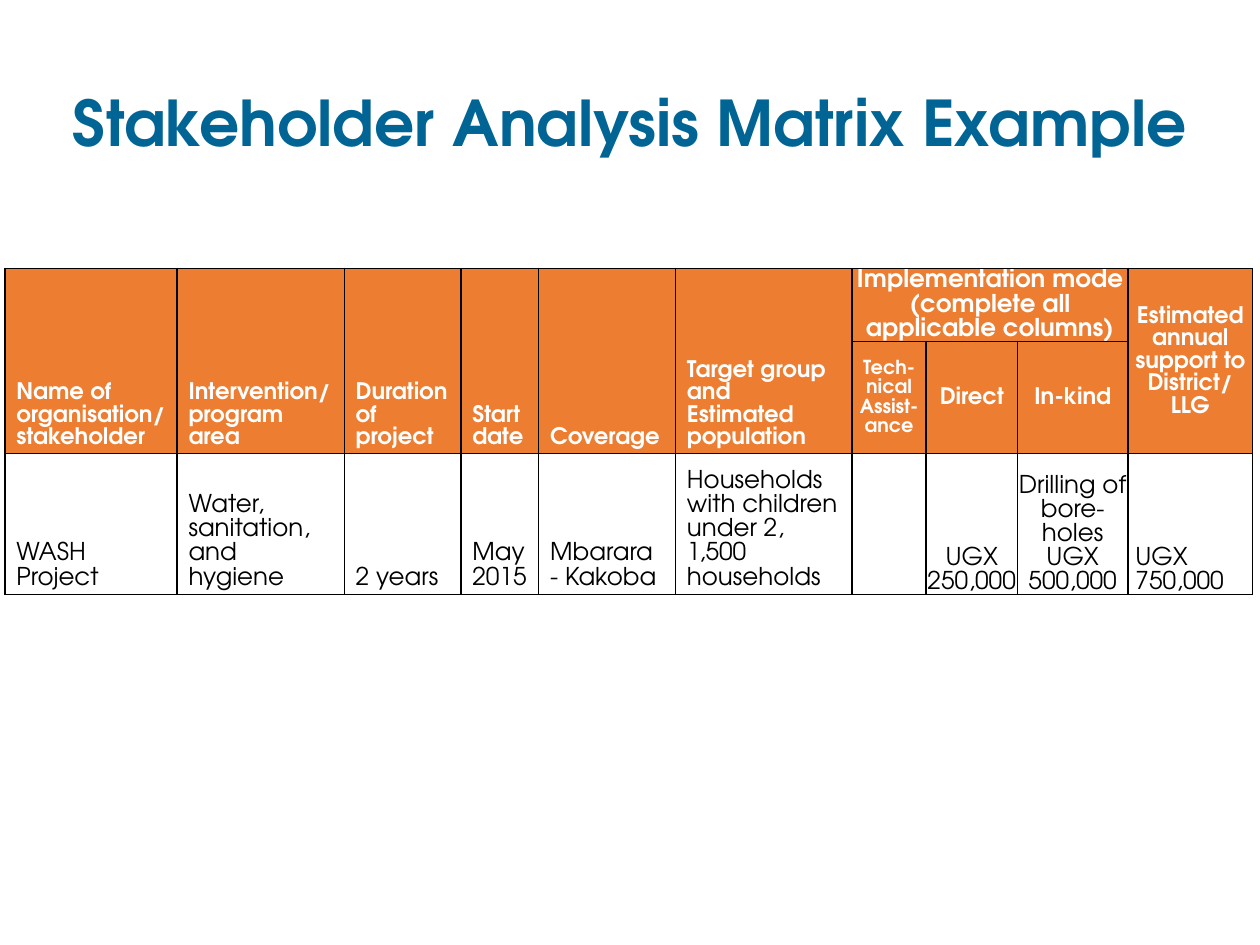
"""Build the stakeholder analysis matrix slide."""
from dataclasses import dataclass

from lxml import etree
from pptx import Presentation
from pptx import util as u
from pptx.dml.color import RGBColor
from pptx.enum import text
from pptx.oxml.ns import qn


@dataclass(frozen=True)
class Theme:
    """Colours, font and type sizes of the slide."""
    font: str = "TeX Gyre Adventor"
    title: str = "006595"
    header: str = "ED7D31"
    header_text: str = "FFFFFF"
    body_text: str = "000000"
    border: str = "000000"
    title_size: int = 36
    large: int = 14
    normal: int = 13
    small: int = 11


THEME = Theme()
COLUMN_WIDTHS = (3.47, 3.37, 2.35, 1.57, 2.76, 3.56, 1.49, 1.84, 2.23, 2.51)
ROW_HEIGHTS = (1.47, 2.26, 2.84)
WIDE_COLUMNS = 6
HEADERS = (
    "Name of organisation/ stakeholder",
    "Intervention/ program area",
    "Duration of project",
    "Start date",
    "Coverage",
    "Target group and Estimated population",
)
MODES = (
    ("Tech-nical Assist-ance", THEME.small),
    ("Direct", THEME.normal),
    ("In-kind", THEME.normal),
)
PROJECT = (
    "WASH Project",
    "Water, sanitation, and hygiene",
    "2 years",
    "May 2015",
    "Mbarara - Kakoba",
    "Households with children under 2, 1,500 households",
    "",
    "UGX 250,000",
    "Drilling of bore-holes UGX 500,000",
    "UGX 750,000",
)


def add_run(paragraph, words, size, color, bold):
    """Add one formatted run to a paragraph."""
    run = paragraph.add_run()
    run.text = words
    run.font.name = THEME.font
    run.font.size = u.Pt(size)
    run.font.bold = bold
    run.font.color.rgb = RGBColor.from_string(color)


def add_title(slide, words):
    """Place and format the title placeholder."""
    shape = slide.shapes.title
    shape.left, shape.top = u.Cm(0), u.Cm(1.37)
    shape.width, shape.height = u.Cm(25.4), u.Cm(2.34)
    frame = shape.text_frame
    frame.word_wrap = True
    frame.vertical_anchor = text.MSO_ANCHOR.MIDDLE
    paragraph = frame.paragraphs[0]
    paragraph.alignment = text.PP_ALIGN.CENTER
    paragraph.line_spacing = 0.9
    add_run(paragraph, words, THEME.title_size, THEME.title, True)


def set_borders(cell):
    """Draw a thin line on all four sides of a cell."""
    properties = cell._tc.get_or_add_tcPr()
    for side in ("lnL", "lnR", "lnT", "lnB"):
        line = etree.SubElement(properties, qn(f"a:{side}"), w=str(u.Pt(1)))
        fill = etree.SubElement(line, qn("a:solidFill"))
        etree.SubElement(fill, qn("a:srgbClr"), val=THEME.border)


def write_cell(cell, words, size, anchor, header=True, centered=False, padded=False):
    """Write formatted text into a table cell."""
    side, edge = (0.23, 0.1) if padded else (0, 0)
    cell.margin_left = cell.margin_right = u.Cm(side)
    cell.margin_top = cell.margin_bottom = u.Cm(edge)
    cell.vertical_anchor = anchor
    paragraph = cell.text_frame.paragraphs[0]
    paragraph.alignment = text.PP_ALIGN.CENTER if centered else text.PP_ALIGN.LEFT
    paragraph.line_spacing = 1.07
    paragraph.space_after = u.Pt(3)
    if words:
        color = THEME.header_text if header else THEME.body_text
        add_run(paragraph, words, size, color, header)


def add_matrix(slide):
    """Add the empty grid with its borders and fills."""
    rows, columns = len(ROW_HEIGHTS), len(COLUMN_WIDTHS)
    table = slide.shapes.add_table(
        rows, columns, u.Cm(0.1), u.Cm(5.41),
        u.Cm(sum(COLUMN_WIDTHS)), u.Cm(sum(ROW_HEIGHTS))).table
    table.first_row = table.horz_banding = False
    for column, width in zip(table.columns, COLUMN_WIDTHS):
        column.width = u.Cm(width)
    for index, (row, height) in enumerate(zip(table.rows, ROW_HEIGHTS)):
        row.height = u.Cm(height)
        for cell in row.cells:
            set_borders(cell)
            if index < rows - 1:
                cell.fill.solid()
                cell.fill.fore_color.rgb = RGBColor.from_string(THEME.header)
            else:
                cell.fill.background()
    return table


def fill_header(table):
    """Merge and label the two header rows."""
    anchors = text.MSO_ANCHOR
    last = len(COLUMN_WIDTHS) - 1
    for column in (*range(WIDE_COLUMNS), last):
        table.cell(0, column).merge(table.cell(1, column))
    table.cell(0, WIDE_COLUMNS).merge(table.cell(0, last - 1))
    for column, words in enumerate(HEADERS):
        write_cell(table.cell(0, column), words, THEME.normal, anchors.BOTTOM, padded=True)
    write_cell(table.cell(0, WIDE_COLUMNS),
               "Implementation mode (complete all applicable columns)",
               THEME.large, anchors.TOP, centered=True)
    write_cell(table.cell(0, last), "Estimated annual support to District/ LLG",
               THEME.normal, anchors.MIDDLE, centered=True)
    for column, (words, size) in enumerate(MODES, WIDE_COLUMNS):
        write_cell(table.cell(1, column), words, size, anchors.MIDDLE, centered=True)


def fill_project(table):
    """Write the project row."""
    last = len(PROJECT) - 1
    for column, words in enumerate(PROJECT):
        write_cell(table.cell(2, column), words, THEME.large, text.MSO_ANCHOR.BOTTOM,
                   header=False, centered=WIDE_COLUMNS <= column < last,
                   padded=column < WIDE_COLUMNS)
    table.cell(2, last).margin_left = u.Cm(0.15)


def main():
    """Build and save the presentation."""
    presentation = Presentation()
    presentation.slide_width, presentation.slide_height = u.Cm(25.4), u.Cm(19.05)
    slide = presentation.slides.add_slide(presentation.slide_layouts[5])
    add_title(slide, "Stakeholder Analysis Matrix Example")
    table = add_matrix(slide)
    fill_header(table)
    fill_project(table)
    presentation.save("out.pptx")


if __name__ == "__main__":
    main()
